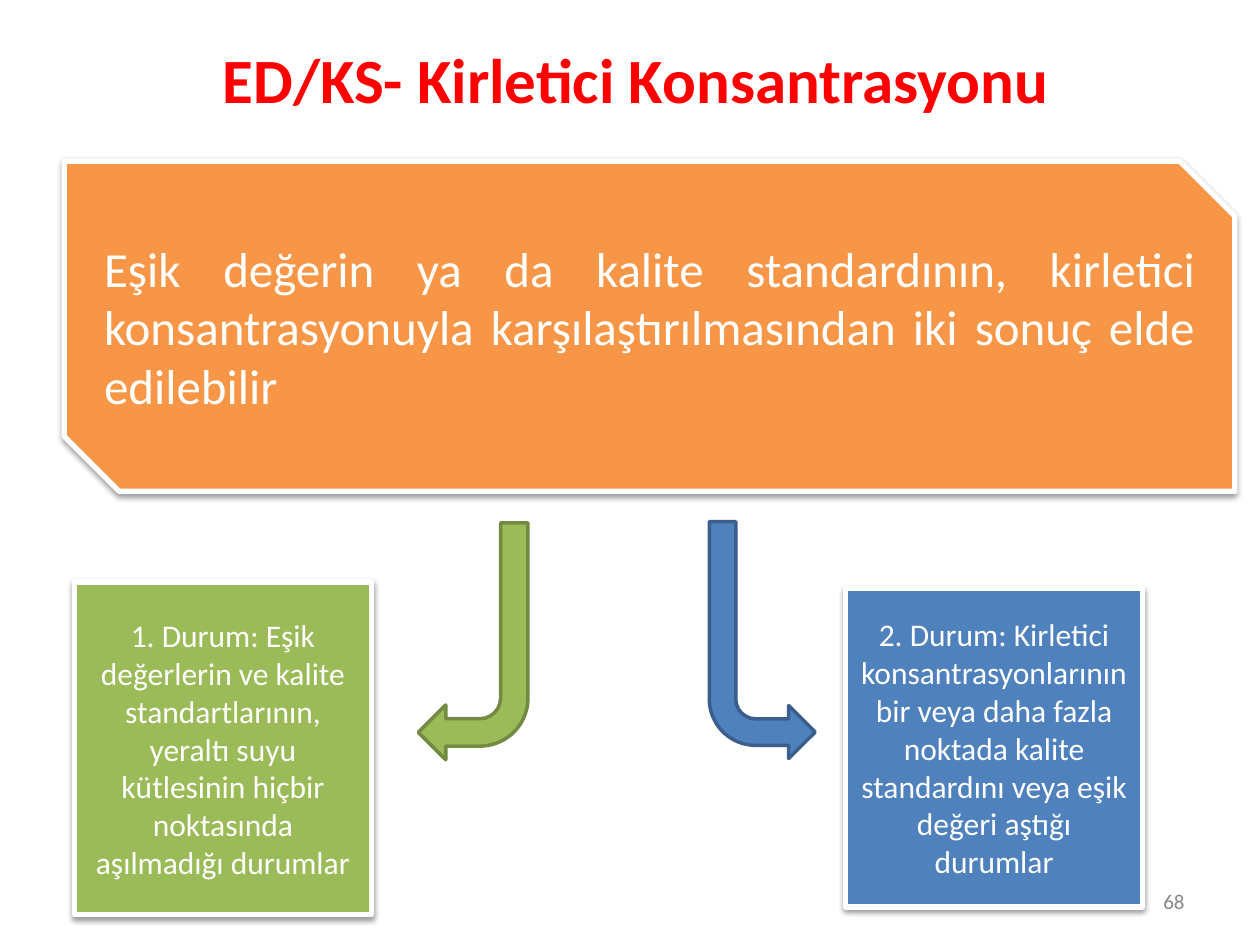
from lxml.etree import SubElement
from pptx import Presentation
from pptx.dml.color import RGBColor
from pptx.enum.shapes import MSO_SHAPE
from pptx.enum.text import MSO_ANCHOR, PP_ALIGN
from pptx.oxml.ns import qn
from pptx.util import Inches, Pt

presentation = Presentation()
presentation.slide_width, presentation.slide_height = Inches(10), Inches(7.5)
slide = presentation.slides.add_slide(presentation.slide_layouts[6])


def color(hex_string):
    return RGBColor.from_string(hex_string)


def write(shape, text, alignment, **font_format):
    """Fill a shape with one wrapped, vertically centred paragraph."""
    frame = shape.text_frame
    frame.word_wrap = True
    frame.vertical_anchor = MSO_ANCHOR.MIDDLE
    paragraph = frame.paragraphs[0]
    paragraph.text = text
    paragraph.alignment = alignment
    font = paragraph.font
    font.color.rgb = color(font_format.pop("hex_color"))
    for name, value in font_format.items():
        setattr(font, name, value)


# Places are left, top, width, height in percent of the slide's size
slide_size = (presentation.slide_width, presentation.slide_height) * 2
ORANGE, GREEN, BLUE, WHITE = "F79646", "9BBB59", "4F81BD", "FFFFFF"

# Title and page number
labels = [
    ((5.9, 0, 89.1, 16.67), "ED/KS- Kirletici Konsantrasyonu", PP_ALIGN.CENTER,
     dict(size=Pt(36), bold=True, hex_color="FF0000")),
    ((71.7, 92.67, 23.3, 5.33), "68", PP_ALIGN.RIGHT,
     dict(size=Pt(12), hex_color="898989")),
]
for place, text, alignment, font_format in labels:
    box = slide.shapes.add_textbox(
        *(int(share * length / 100) for share, length in zip(place, slide_size)))
    write(box, text, alignment, name="Calibri", **font_format)

# Statement, the two arrows leaving it, and the two cases
statement = ("Eşik değerin ya da kalite standardının, kirletici konsantrasyonuyla "
             "karşılaştırılmasından iki sonuç elde edilebilir")
case_1 = ("1. Durum: Eşik değerlerin ve kalite standartlarının, yeraltı suyu "
          "kütlesinin hiçbir noktasında aşılmadığı durumlar")
case_2 = ("2. Durum: Kirletici konsantrasyonlarının bir veya daha fazla noktada "
          "kalite standardını veya eşik değeri aştığı durumlar")
panel = dict(line=WHITE, weight=3)
case = dict(panel, kind=MSO_SHAPE.RECTANGLE, alignment=PP_ALIGN.CENTER, size=18)
arrow = dict(kind=MSO_SHAPE.BENT_ARROW, weight=2)
blocks = [
    dict(panel, kind=MSO_SHAPE.SNIP_2_DIAG_RECTANGLE, place=(5.1, 17.07, 92.9, 34.93),
         fill=ORANGE, text=statement, alignment=PP_ALIGN.JUSTIFY, size=28),
    dict(arrow, place=(33.2, 55.33, 8.7, 25.07), fill=GREEN, line="738A42"),
    dict(arrow, place=(56.3, 55.2, 8.4, 25.07), fill=BLUE, line="3A5F8C", flip=True),
    dict(case, place=(5.9, 61.6, 23.6, 35.2), fill=GREEN, text=case_1),
    dict(case, place=(67.1, 62.27, 23.6, 33.73), fill=BLUE, text=case_2),
]
for block in blocks:
    shape = slide.shapes.add_shape(
        block["kind"],
        *(int(share * length / 100) for share, length in zip(block["place"], slide_size)))
    shape.shadow.inherit = False
    shape.fill.solid()
    shape.fill.fore_color.rgb = color(block["fill"])
    shape.line.color.rgb = color(block["line"])
    shape.line.width = Pt(block["weight"])

    # Arrows are turned to start at the top; the right one is mirrored
    if "text" not in block:
        shape.rotation = 180
        if block.get("flip"):
            shape._element.spPr.xfrm.set("flipH", "1")
        continue

    # Panels have text and a soft shadow below
    write(shape, block["text"], block["alignment"],
          name="Calibri", size=Pt(block["size"]), hex_color=WHITE)
    effects = shape._element.spPr.find(qn("a:effectLst"))
    shadow = SubElement(effects, qn("a:outerShdw"), blurRad=str(Pt(3.1)),
                        dist=str(Pt(1.6)), dir="5400000", rotWithShape="0")
    shadow_color = SubElement(shadow, qn("a:srgbClr"), val="000000")
    SubElement(shadow_color, qn("a:alpha"), val="38000")

presentation.save("out.pptx")
